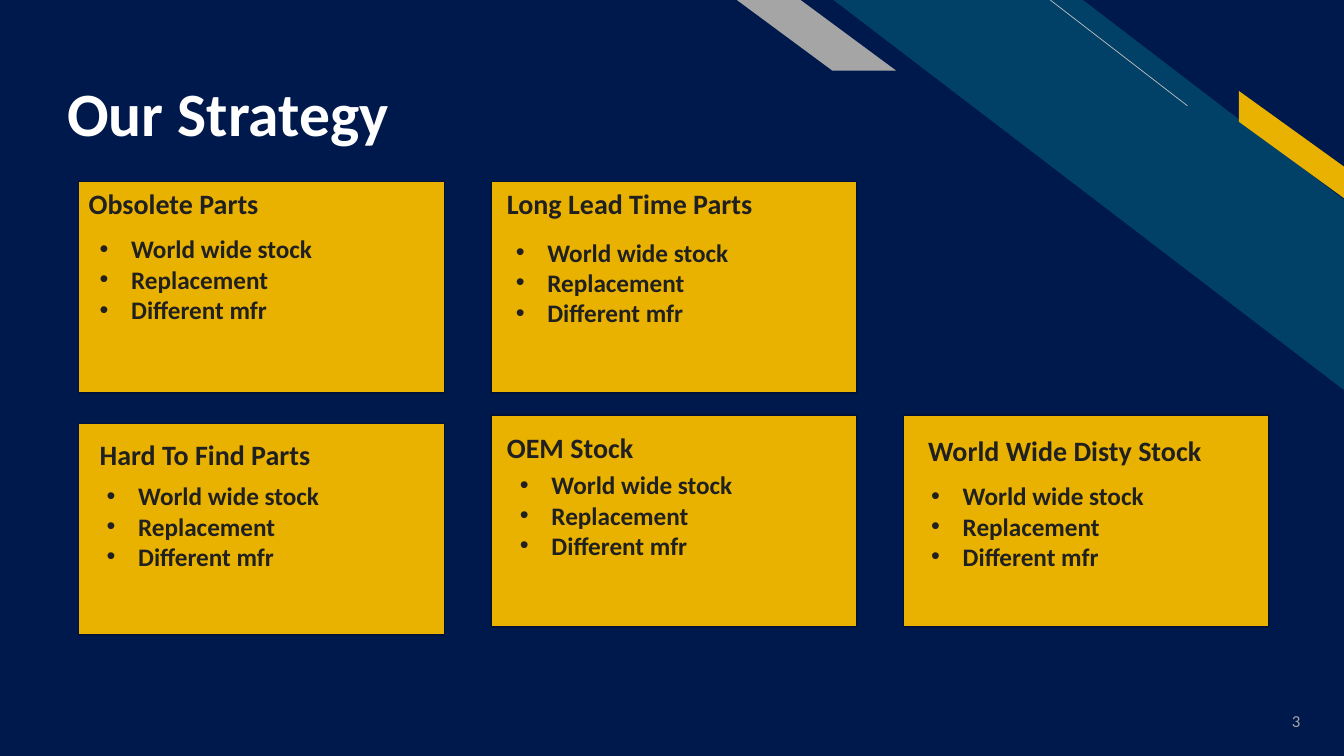
from dataclasses import dataclass

from lxml import etree
from pptx import Presentation
from pptx.dml.color import RGBColor
from pptx.enum.shapes import MSO_CONNECTOR as Connector, MSO_SHAPE as Preset
from pptx.enum.text import MSO_ANCHOR as Anchor, MSO_AUTO_SIZE as AutoSize, PP_ALIGN as Align
from pptx.oxml.ns import qn
from pptx.util import Pt


@dataclass(frozen=True)
class Theme:
    """Colours, font and type sizes of the slide."""
    navy: str = "00194C"
    teal: str = "014067"
    gold: str = "EAB200"
    grey: str = "A5A5A5"
    hairline: str = "BFBFBF"
    outline: str = "001238"
    ink: str = "202020"
    white: str = "FFFFFF"
    font: str = "Calibri"
    title: int = 44
    heading: int = 20
    body: int = 18
    number: int = 12


THEME = Theme()
CARD_LEFT, CARD_STEP, CARD_WIDTH, CARD_HEIGHT = 56.2, 294.5, 261.4, 151.2
BULLET_INDENT = 22.5
SOURCES = ["World wide stock", "Replacement", "Different mfr"]
CARDS = [
    (0, 129.6, "Obsolete Parts", (56.2, 129.6), (64.1, 163.4)),
    (1, 129.6, "Long Lead Time Parts", (355, 129.6), (361.4, 165.6)),
    (0, 302.4, "Hard To Find Parts", (64.1, 308.9), (69.1, 339.8)),
    (1, 296.6, "OEM Stock", (355, 303.8), (364.3, 331.9)),
    (2, 296.6, "World Wide Disty Stock", (655.9, 306), (658.1, 339.8)),
]


def colour(code):
    """Turn a hex code into a colour."""
    return RGBColor.from_string(code)


def add_bullet(para):
    """Give a paragraph a round bullet with a hanging indent."""
    settings = para._p.get_or_add_pPr()
    settings.set("marL", str(Pt(BULLET_INDENT)))
    settings.set("indent", str(-Pt(BULLET_INDENT)))
    etree.SubElement(settings, qn("a:buFont"), typeface="Arial")
    etree.SubElement(settings, qn("a:buChar"), char="•")


def add_text(page, lines, left, top, width, height, *, size, color=THEME.ink, bold=True,
             align=Align.LEFT, anchor=Anchor.TOP, fit=AutoSize.NONE, bottom=3.6,
             spacing=1.0, bullets=False):
    """Add a wrapped text box with one paragraph for each line."""
    box = page.shapes.add_textbox(Pt(left), Pt(top), Pt(width), Pt(height))
    frame = box.text_frame
    frame.word_wrap = True
    frame.auto_size = fit
    frame.vertical_anchor = anchor
    frame.margin_bottom = Pt(bottom)
    for index, line in enumerate(lines):
        para = frame.add_paragraph() if index else frame.paragraphs[0]
        para.alignment = align
        para.line_spacing = spacing
        if bullets:
            add_bullet(para)
        span = para.add_run()
        span.text = line
        span.font.name = THEME.font
        span.font.size = Pt(size)
        span.font.bold = bold
        span.font.color.rgb = colour(color)


def add_band(page, points, fill):
    """Add a plain filled polygon."""
    start, *others = [(Pt(x), Pt(y)) for x, y in points]
    builder = page.shapes.build_freeform(*start)
    builder.add_line_segments(others, close=True)
    band = builder.convert_to_shape()
    band.shadow.inherit = False
    band.fill.solid()
    band.fill.fore_color.rgb = colour(fill)
    band.line.fill.background()


def add_hairline(page, start, end):
    """Add a thin straight line."""
    line = page.shapes.add_connector(Connector.STRAIGHT, *map(Pt, start + end))
    line.line.color.rgb = colour(THEME.hairline)
    line.line.width = Pt(0.5)
    etree.SubElement(line._element.spPr, qn("a:effectLst"))


def add_panel(page, column, top):
    """Add the gold rectangle behind a strategy."""
    left = CARD_LEFT + column * CARD_STEP
    panel = page.shapes.add_shape(Preset.RECTANGLE, *map(Pt, (left, top, CARD_WIDTH, CARD_HEIGHT)))
    panel.shadow.inherit = False
    panel.fill.solid()
    panel.fill.fore_color.rgb = colour(THEME.gold)
    panel.line.color.rgb = colour(THEME.outline)
    panel.line.width = Pt(1)


def add_decoration(page):
    """Add the navy background and the diagonal bands."""
    page.background.fill.solid()
    page.background.fill.fore_color.rgb = colour(THEME.navy)
    add_band(page, [(595.4, 0), (773.6, 0), (960, 142.7), (960, 278.6)], THEME.teal)
    add_hairline(page, (750.2, 0), (848.2, 75.6))
    add_band(page, [(885, 65), (960, 119), (960, 141.5), (885, 87)], THEME.gold)
    add_band(page, [(526.3, 0), (571.8, 0), (640, 50.4), (594.5, 50.4)], THEME.grey)


def main():
    """Build the strategy slide and save it."""
    deck = Presentation()
    deck.slide_width, deck.slide_height = Pt(960), Pt(540)
    page = deck.slides.add_slide(deck.slide_layouts[6])
    add_decoration(page)
    add_text(page, ["Our Strategy"], 41, 16.6, 656, 90.7, size=THEME.title, color=THEME.white,
             anchor=Anchor.BOTTOM, bottom=0, spacing=0.9)
    add_text(page, ["3"], 877.7, 500.4, 58.3, 28.8, size=THEME.number, color=THEME.grey,
             bold=False, align=Align.RIGHT, anchor=Anchor.MIDDLE)
    for column, top, heading, heading_at, sources_at in CARDS:
        add_panel(page, column, top)
        add_text(page, [heading], *heading_at, 216, 31.5, size=THEME.heading,
                 fit=AutoSize.SHAPE_TO_FIT_TEXT)
        add_text(page, SOURCES, *sources_at, 239, 72.7, size=THEME.body,
                 fit=AutoSize.SHAPE_TO_FIT_TEXT, bullets=True)
    deck.save("out.pptx")


if __name__ == "__main__":
    main()
